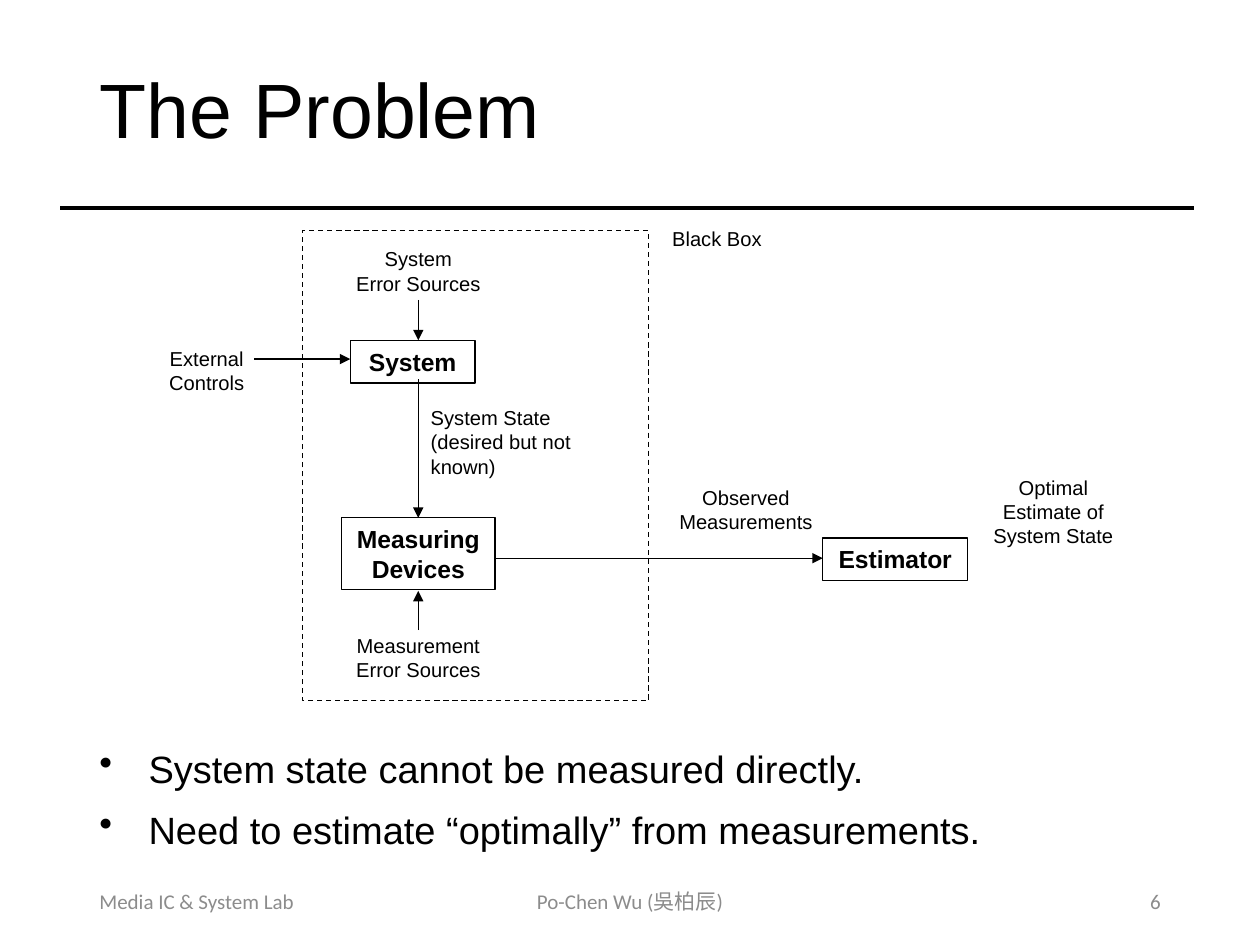
import pptx
import pptx.dml.color
import pptx.enum.dml
import pptx.enum.shapes
import pptx.enum.text
import pptx.oxml.ns
import pptx.util
from lxml import etree

PX = 9144
BLACK = pptx.dml.color.RGBColor(0x00, 0x00, 0x00)
GRAY = pptx.dml.color.RGBColor(0x8C, 0x8C, 0x8C)
ALIGN = pptx.enum.text.PP_ALIGN
ANCHOR = pptx.enum.text.MSO_ANCHOR


def scale(*lengths):
    """Turn px lengths into EMU."""
    return [pptx.util.Emu(length * PX) for length in lengths]


def add_element(parent, tag, **attributes):
    """Append a drawing element to an XML parent."""
    return etree.SubElement(parent, pptx.oxml.ns.qn(tag), attributes)


def write(shape, lines, size, align=ALIGN.LEFT, font="Arial", color=BLACK,
          bold=False, anchor=ANCHOR.TOP):
    """Fill a shape with uniformly styled paragraphs and return them."""
    frame = shape.text_frame
    frame.word_wrap = True
    frame.vertical_anchor = anchor
    frame.text = "\n".join(lines)
    for paragraph in frame.paragraphs:
        paragraph.alignment = align
        paragraph.font.size = pptx.util.Pt(size)
        paragraph.font.name = font
        paragraph.font.bold = bold
        paragraph.font.color.rgb = color
    return frame.paragraphs


def add_text(slide, box, lines, size, **style):
    """Add a text box and return its paragraphs."""
    return write(slide.shapes.add_textbox(*scale(*box)), lines, size, **style)


def add_box(slide, box):
    """Add an unfilled rectangle with a thin black outline."""
    shape = slide.shapes.add_shape(
        pptx.enum.shapes.MSO_SHAPE.RECTANGLE, *scale(*box))
    shape.shadow.inherit = False
    shape.fill.background()
    shape.line.color.rgb = BLACK
    shape.line.width = pptx.util.Pt(0.75)
    return shape


def add_line(slide, start, end, width=0.75, arrow=True):
    """Add a black straight line, with an arrowhead at its end if asked."""
    line = slide.shapes.add_connector(
        pptx.enum.shapes.MSO_CONNECTOR.STRAIGHT, *scale(*start, *end))
    line.line.color.rgb = BLACK
    line.line.width = pptx.util.Pt(width)
    if arrow:
        add_element(line.line._get_or_add_ln(), "a:tailEnd", type="triangle")
    add_element(line._element.spPr, "a:effectLst")


def add_title(slide, left, top, width, height):
    """Add the title and the rule below it."""
    title, = add_text(slide, (left, top, width, height), ["The Problem"], 44,
                      anchor=ANCHOR.MIDDLE)
    title.line_spacing = 0.9
    rule = top + height + 9
    add_line(slide, (left - 21, rule), (left + width + 17, rule), 2.25, False)


def add_diagram(slide, left, top):
    """Add the block diagram with the dashed black box at the given corner."""
    black_box = add_box(slide, (left, top, 275, 373))
    black_box.line.dash_style = pptx.enum.dml.MSO_LINE.DASH

    blocks = [
        ((38, 87, 99, 34), "System"),
        ((31, 228, 122, 57), "Measuring Devices"),
        ((413, 244, 115, 34), "Estimator"),
    ]
    for (x, y, width, height), name in blocks:
        block = add_box(slide, (left + x, top + y, width, height))
        write(block, [name], 14.1, align=ALIGN.CENTER, bold=True)

    labels = [
        ((23, 8, 138, 49), ["System", "Error Sources"], ALIGN.CENTER),
        ((23, 315, 138, 49), ["Measurement", "Error Sources"], ALIGN.CENTER),
        ((92, 134, 138, 68), ["System State (desired but not known)"], ALIGN.LEFT),
        ((-145, 87, 138, 49), ["External Controls"], ALIGN.CENTER),
        ((283, 197, 138, 49), ["Observed Measurements"], ALIGN.CENTER),
        ((527, 189, 138, 68), ["Optimal Estimate of System State"], ALIGN.CENTER),
        ((283, -8, 92, 29), ["Black Box"], ALIGN.CENTER),
    ]
    for (x, y, width, height), lines, align in labels:
        add_text(slide, (left + x, top + y, width, height), lines, 11.5,
                 align=align)

    axis = 92
    arrows = [
        ((-38, 102), (38, 102)),
        ((axis, 55), (axis, 87)),
        ((axis, 118), (axis, 228)),
        ((axis, 317), (axis, 286)),
        ((153, 260), (413, 260)),
    ]
    for start, end in arrows:
        add_line(slide, (left + start[0], top + start[1]),
                 (left + end[0], top + end[1]))


def add_bullets(slide, left, top, width, height):
    """Add the bulleted conclusions, resting on the bottom of the box."""
    lines = ["System state cannot be measured directly.",
             "Need to estimate “optimally” from measurements."]
    shape = slide.shapes.add_textbox(*scale(left, top, width, height))
    shape.text_frame.margin_bottom = 0
    indent = scale(39)[0]
    for paragraph in write(shape, lines, 21.7, anchor=ANCHOR.BOTTOM):
        paragraph.line_spacing = 0.8
        paragraph.space_before = pptx.util.Pt(14)
        properties = paragraph._p.get_or_add_pPr()
        properties.set("marL", str(indent))
        properties.set("indent", str(-indent))
        bullet = pptx.oxml.ns.qn("a:buChar")
        element = etree.Element(bullet, char="•")
        properties.find(pptx.oxml.ns.qn("a:defRPr")).addprevious(element)


def add_footer(slide, left, top, width, height):
    """Add the lab, author and page number in one row."""
    side, middle = 225, 338
    parts = [
        (left, side, "Media IC & System Lab", ALIGN.LEFT),
        (left + (width - middle) // 2, middle, "Po-Chen Wu (吳柏辰)", ALIGN.CENTER),
        (left + width - side, side, "6", ALIGN.RIGHT),
    ]
    for x, part_width, text, align in parts:
        paragraph, = add_text(slide, (x, top, part_width, height), [text], 12,
                              align=align, font="Calibri", color=GRAY,
                              anchor=ANCHOR.MIDDLE)
        add_element(paragraph.runs[0]._r.get_or_add_rPr(), "a:ea",
                    typeface="Noto Sans CJK SC")


def main():
    """Build and save the slide."""
    presentation = pptx.Presentation()
    presentation.slide_width, presentation.slide_height = scale(1000, 750)
    slide = presentation.slides.add_slide(presentation.slide_layouts[6])
    add_title(slide, 69, 24, 862, 132)
    add_diagram(slide, 240, 183)
    add_bullets(slide, 69, 580, 862, 96)
    add_footer(slide, 69, 695, 862, 40)
    presentation.save("out.pptx")


if __name__ == "__main__":
    main()
